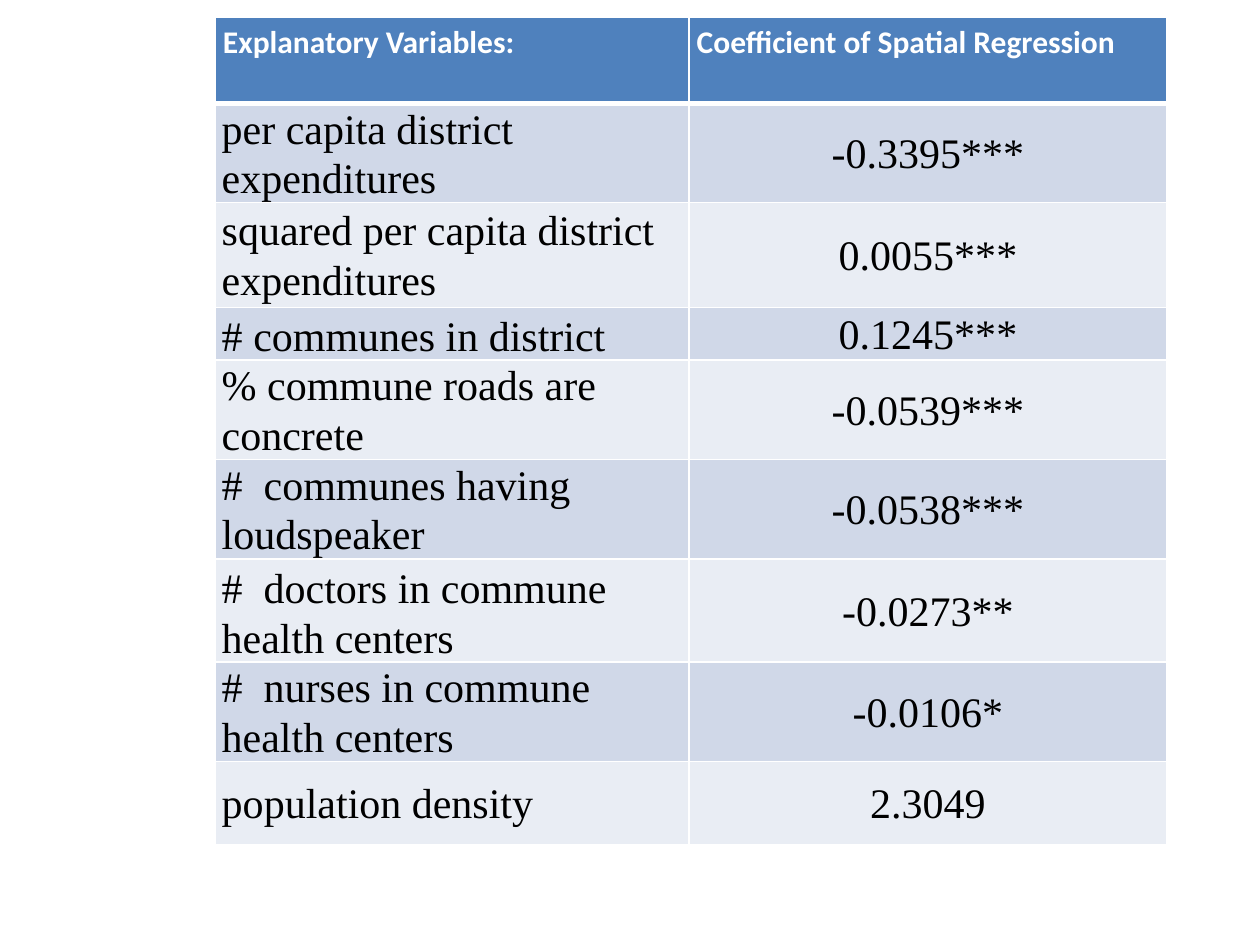
"""Build a slide with a table of spatial regression coefficients."""
import lxml.etree
import pptx
import pptx.dml.color
import pptx.enum.text
import pptx.oxml.ns
import pptx.util

THEME = {
    "header": {"fill": "4F81BD", "color": "FFFFFF", "font": "Calibri", "size": 18, "bold": True},
    "body": {"color": "000000", "font": "Times New Roman", "size": 24, "bold": False},
    "bands": ["D0D8E8", "E9EDF4"],
    "border": "FFFFFF",
}
ALIGN = pptx.enum.text.PP_ALIGN
ANCHOR = pptx.enum.text.MSO_ANCHOR
UNIT = pptx.util.Inches(0.01)
SLIDE_COLUMNS, SLIDE_ROWS = 1000, 750
COLUMN_WIDTHS = [376, 379]
HEADINGS = ["Explanatory Variables:", "Coefficient of Spatial Regression"]
HEADING_HEIGHT = 68
VARIABLES = [
    ("per capita district expenditures", "-0.3395***", 42, ANCHOR.MIDDLE),
    ("squared per capita district expenditures", "0.0055***", 83, ANCHOR.MIDDLE),
    ("# communes in district", "0.1245***", 42, ANCHOR.BOTTOM),
    ("% commune roads are concrete", "-0.0539***", 42, ANCHOR.BOTTOM),
    ("#  communes having loudspeaker", "-0.0538***", 42, ANCHOR.BOTTOM),
    ("#  doctors in commune health centers", "-0.0273**", 82, ANCHOR.BOTTOM),
    ("#  nurses in commune health centers", "-0.0106*", 62, ANCHOR.BOTTOM),
    ("population density", "2.3049", 66, ANCHOR.MIDDLE),
]


def write_cell(cell, text, *, fill, color, font, size, bold, align=ALIGN.LEFT,
               anchor=ANCHOR.TOP, inset=(5, 0), line_spacing=None, gap=None):
    cell.fill.solid()
    cell.fill.fore_color.rgb = pptx.dml.color.RGBColor.from_string(fill)
    cell.vertical_anchor = anchor
    cell.margin_left = cell.margin_right = inset[0] * UNIT
    cell.margin_top = cell.margin_bottom = inset[1] * UNIT
    para = cell.text_frame.paragraphs[0]
    para.alignment = align
    para.line_spacing = line_spacing
    para.space_before = para.space_after = gap
    span = para.add_run()
    span.text = text
    span.font.name = font
    span.font.size = pptx.util.Pt(size)
    span.font.bold = bold
    span.font.color.rgb = pptx.dml.color.RGBColor.from_string(color)


def set_borders(cell, *, color, bottom=1):
    qualified = pptx.oxml.ns.qn
    properties = cell._tc.get_or_add_tcPr()
    sides = [("lnL", 1), ("lnR", 1), ("lnT", 1), ("lnB", bottom)]
    for index, (side, points) in enumerate(sides):
        line = lxml.etree.Element(qualified(f"a:{side}"), w=str(pptx.util.Pt(points)))
        solid = lxml.etree.SubElement(line, qualified("a:solidFill"))
        lxml.etree.SubElement(solid, qualified("a:srgbClr"), val=color)
        properties.insert(index, line)


deck = pptx.Presentation()
deck.slide_width, deck.slide_height = SLIDE_COLUMNS * UNIT, SLIDE_ROWS * UNIT
page = deck.slides.add_slide(deck.slide_layouts[6])
frame = page.shapes.add_table(
    len(VARIABLES) + 1, len(HEADINGS), 171 * UNIT, 14 * UNIT, 756 * UNIT, 691 * UNIT)
table = frame.table

for column, (heading, width) in enumerate(zip(HEADINGS, COLUMN_WIDTHS)):
    table.columns[column].width = width * UNIT
    write_cell(table.cell(0, column), heading, inset=(6, 5), **THEME["header"])
    set_borders(table.cell(0, column), color=THEME["border"], bottom=3)
table.rows[0].height = HEADING_HEIGHT * UNIT

for row, (variable, coefficient, height, anchor) in enumerate(VARIABLES, start=1):
    table.rows[row].height = height * UNIT
    entries = [(variable, ALIGN.LEFT, anchor), (coefficient, ALIGN.CENTER, ANCHOR.MIDDLE)]
    for column, (text, align, placement) in enumerate(entries):
        cell = table.cell(row, column)
        write_cell(cell, text, fill=THEME["bands"][(row - 1) % 2], align=align,
                   anchor=placement, line_spacing=1.07, gap=pptx.util.Pt(2), **THEME["body"])
        set_borders(cell, color=THEME["border"], bottom=1)
        if row == 1:
            cell._tc.tcPr.find(pptx.oxml.ns.qn("a:lnT")).set("w", str(pptx.util.Pt(3)))

frame.height = 691 * UNIT
deck.save("out.pptx")
